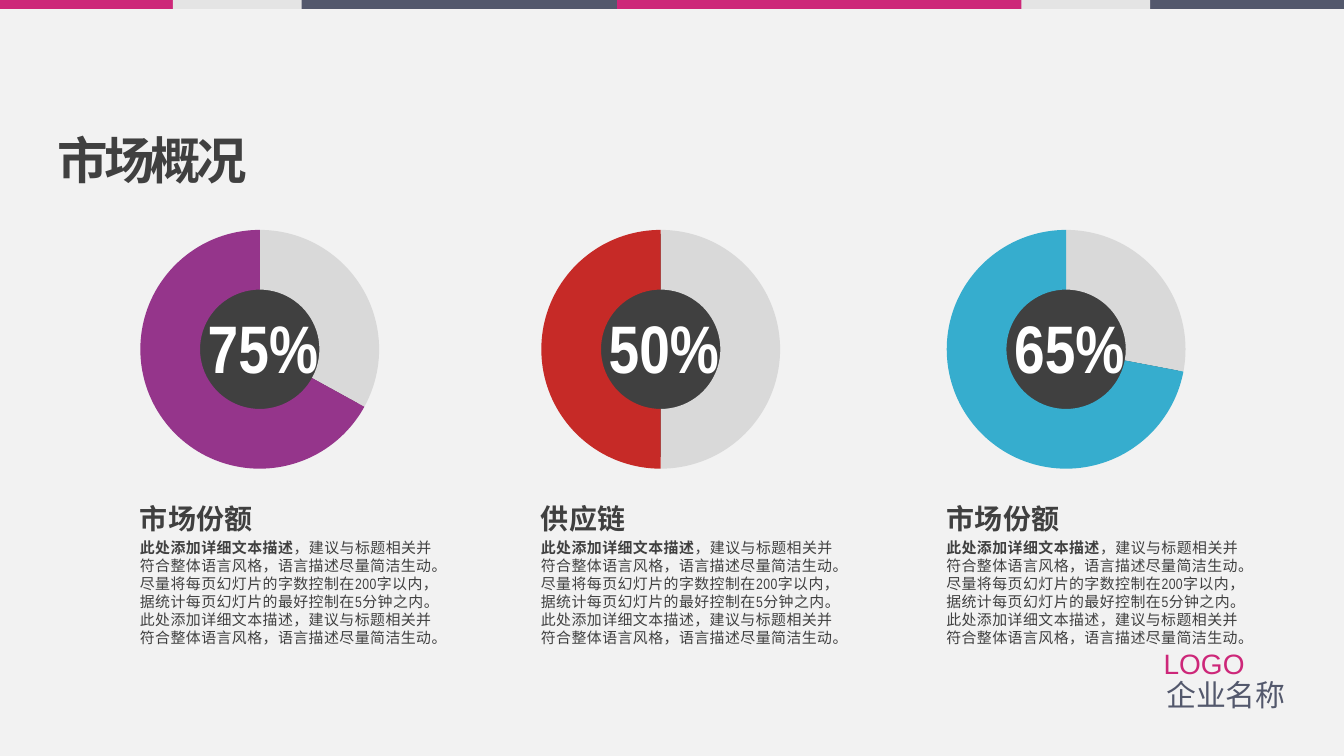
from lxml.etree import SubElement
from pptx import Presentation
from pptx.chart.data import CategoryChartData
from pptx.dml.color import RGBColor
from pptx.enum.chart import XL_CHART_TYPE
from pptx.enum.shapes import MSO_SHAPE
from pptx.enum.text import MSO_ANCHOR, PP_ALIGN
from pptx.oxml import parse_xml
from pptx.oxml.ns import nsdecls, qn
from pptx.util import Pt

PAPER = RGBColor(0xF2, 0xF2, 0xF2)
SLATE = RGBColor(0x53, 0x58, 0x6C)
PINK = RGBColor(0xCD, 0x27, 0x79)
SILVER = RGBColor(0xE4, 0xE4, 0xE4)
DARK = RGBColor(0x40, 0x40, 0x40)
GREY = RGBColor(0xD9, 0xD9, 0xD9)
WHITE = RGBColor(0xFF, 0xFF, 0xFF)
PURPLE = RGBColor(0x95, 0x35, 0x8B)
RED = RGBColor(0xC6, 0x2A, 0x27)
BLUE = RGBColor(0x36, 0xAD, 0xCE)

LEAD = "此处添加详细文本描述"
ADVICE = "，建议与标题相关并符合整体语言风格，语言描述尽量简洁生动。"
BODY = ADVICE + "尽量将每页幻灯片的字数控制在200字以内，据统计每页幻灯片的最好控制在5分钟之内。" + LEAD + ADVICE

prs = Presentation()
prs.slide_width, prs.slide_height = Pt(720), Pt(405)
s = prs.slides.add_slide(prs.slide_layouts[6])
s.background.fill.solid()
s.background.fill.fore_color.rgb = PAPER


def add_shape(kind, x, y, w, h, color):
    sp = s.shapes.add_shape(kind, Pt(x), Pt(y), Pt(w), Pt(h))
    sp.shadow.inherit = False
    sp.fill.solid()
    sp.fill.fore_color.rgb = color
    sp.line.fill.background()


def add_text(x, y, w, h, runs, size, color, font="Arial Narrow", spacing=0,
             inset=(5, 3), wrap=True, align=PP_ALIGN.LEFT, anchor=MSO_ANCHOR.TOP):
    tf = s.shapes.add_textbox(Pt(x), Pt(y), Pt(w), Pt(h)).text_frame
    dx, dy = inset
    frame = {"margin_left": Pt(dx), "margin_right": Pt(dx), "margin_top": Pt(dy),
             "margin_bottom": Pt(dy), "word_wrap": wrap, "vertical_anchor": anchor}
    for key, value in frame.items():
        setattr(tf, key, value)
    p = tf.paragraphs[0]
    p.alignment = align
    for text, bold in runs:
        r = p.add_run()
        r.text = text
        for key, value in {"name": font, "size": Pt(size), "bold": bold}.items():
            setattr(r.font, key, value)
        r.font.color.rgb = color
        rpr = r._r.get_or_add_rPr()
        rpr.set("spc", str(round(spacing * 100)))
        SubElement(rpr, qn("a:ea")).set("typeface", font)


for x, w, color in [(498, 222, SLATE), (0, 222, PINK), (133, 222, SLATE),
                    (92.7, 69, SILVER), (330.7, 222, PINK), (547.2, 69, SILVER)]:
    add_shape(MSO_SHAPE.RECTANGLE, x, 0, w, 4.8, color)

add_text(26, 66.2, 177, 38, [("市场概况", True)], 27, DARK, spacing=-2.2)

for x, title, label, values, color in [
    (59, "市场份额", "75%", (33, 67), PURPLE),
    (273.8, "供应链", "50%", (50, 50), RED),
    (491, "市场份额", "65%", (28, 72), BLUE),
]:
    add_shape(MSO_SHAPE.OVAL, x + 22, 125.3, 119.5, 119.5, DARK)
    data = CategoryChartData()
    data.categories = ["1", "2"]
    data.add_series("Series 1", values)
    chart = s.shapes.add_chart(XL_CHART_TYPE.DOUGHNUT, Pt(x), Pt(112.3),
                               Pt(162), Pt(148.3), data).chart
    for key, value in {"has_legend": False, "has_title": False}.items():
        setattr(chart, key, value)
    for key, value in {"name": "Arial", "size": Pt(18)}.items():
        setattr(chart.font, key, value)
    plot = chart.plots[0]
    plot.vary_by_categories = False
    plot._element.find(qn("c:holeSize")).set("val", "85")
    for i, fill in enumerate((GREY, color)):
        fmt = plot.series[0].points[i].format
        fmt.fill.solid()
        fmt.fill.fore_color.rgb = fill
        fmt.line.fill.background()
    area = chart._chartSpace.chart.plotArea
    for old in area.findall(qn("c:layout")):
        area.remove(old)
    area.insert(0, parse_xml(
        f'<c:layout {nsdecls("c")}><c:manualLayout><c:layoutTarget val="inner"/>'
        '<c:xMode val="edge"/><c:yMode val="edge"/><c:x val="0.1"/><c:y val="0.07"/>'
        '<c:w val="0.79"/><c:h val="0.87"/></c:manualLayout></c:layout>'))

    add_text(x + 44, 160.6, 75.6, 51, [(label, True)], 36, WHITE,
             inset=(7.2, 3.6), align=PP_ALIGN.CENTER)
    add_text(x + 11, 285.8, 168.5, 78.5, [(LEAD, True), (BODY, False)], 8, DARK, spacing=0.2)
    add_text(x + 11, 265.7, 73, 24, [(title, True)], 15, DARK, spacing=0.2, wrap=False)

for x, y, w, h, text, size, color in [(617.8, 357, 97, 30, "企业名称", 16, SLATE),
                                      (616.3, 341.3, 108.7, 28, "LOGO", 15, PINK)]:
    add_text(x, y, w, h, [(text, False)], size, color, font="Arial",
             inset=(7.2, 3.6), anchor=MSO_ANCHOR.MIDDLE)

prs.save("out.pptx")
